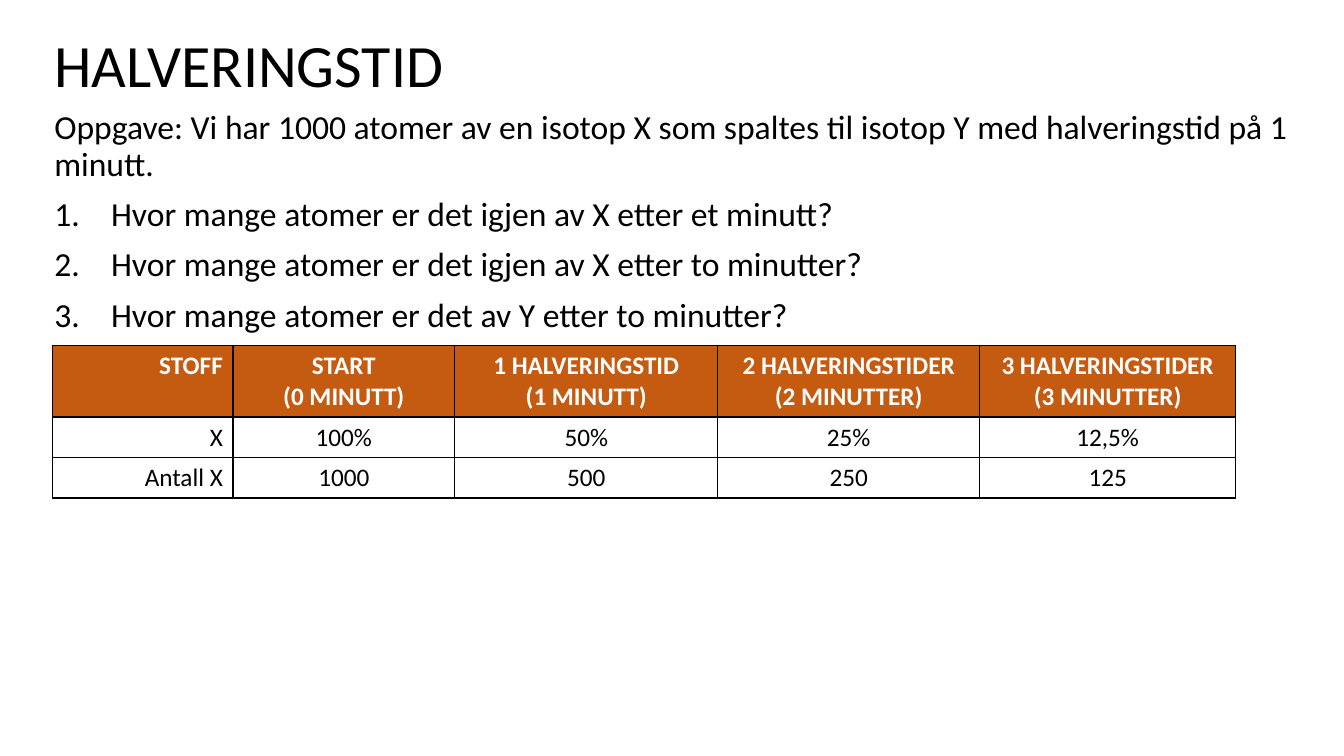
from lxml import etree
from pptx import Presentation
from pptx.dml.color import RGBColor
from pptx.enum.text import MSO_ANCHOR, PP_ALIGN
from pptx.oxml.ns import qn
from pptx.util import Cm, Pt

MIDDLE = MSO_ANCHOR.MIDDLE
CENTER = PP_ALIGN.CENTER
RIGHT = PP_ALIGN.RIGHT
FONT = "Calibri"
BLACK, WHITE, RUST = "000000", "FFFFFF", "C55A11"

TASK = "Oppgave: Vi har 1000 atomer av en isotop X som spaltes til isotop Y med halveringstid på 1 minutt."
ASKS = [
    "Hvor mange atomer er det igjen av X etter et minutt?",
    "Hvor mange atomer er det igjen av X etter to minutter?",
    "Hvor mange atomer er det av Y etter to minutter?",
]
ROWS = [
    ["STOFF", "START\n(0 MINUTT)", "1 HALVERINGSTID\n(1 MINUTT)",
     "2 HALVERINGSTIDER\n(2 MINUTTER)", "3 HALVERINGSTIDER\n(3 MINUTTER)"],
    ["X", "100%", "50%", "25%", "12,5%"],
    ["Antall X", "1000", "500", "250", "125"],
]
WIDTHS = [4.55, 5.59, 6.63, 6.6, 6.45]
HEIGHTS = [1.8, 1.02, 1.02]


def color(code):
    return RGBColor.from_string(code)


def style(para, size, code=BLACK, bold=False):
    for run in para.runs:
        font = run.font
        font.name, font.size, font.bold = FONT, Pt(size), bold
        font.color.rgb = color(code)


def add_text(slide, left, top, width, height, lines, size):
    box = slide.shapes.add_textbox(Cm(left), Cm(top), Cm(width), Cm(height))
    frame = box.text_frame
    frame.word_wrap = True
    frame.text = "\n".join(lines)
    for para in frame.paragraphs:
        style(para, size)
    return frame


def number(para):
    props = para._p.get_or_add_pPr()
    props.set("marL", str(Cm(1.43)))
    props.set("indent", str(-Cm(1.43)))
    etree.SubElement(props, qn("a:buFont"), typeface="+mj-lt")
    etree.SubElement(props, qn("a:buAutoNum"), type="arabicPeriod")


def add_task(slide):
    frame = add_text(slide, 1.12, 2.67, 32.49, 15.9, [TASK] + ASKS, 24)
    for para in frame.paragraphs:
        para.line_spacing = 0.9
        para.space_before = Pt(10)
    for para in frame.paragraphs[1:]:
        number(para)


def border(cell):
    props = cell._tc.get_or_add_tcPr()
    for place, side in enumerate(("a:lnL", "a:lnR", "a:lnT", "a:lnB")):
        line = etree.Element(qn(side), w=str(Pt(1)))
        fill = etree.SubElement(line, qn("a:solidFill"))
        etree.SubElement(fill, qn("a:srgbClr"), val=BLACK)
        props.insert(place, line)


def fill_cell(cell, text, head, first):
    para = cell.text_frame.paragraphs[0]
    para.text = text
    para.alignment = RIGHT if first else CENTER
    style(para, 18, WHITE if head else BLACK, head)
    cell.fill.solid()
    cell.fill.fore_color.rgb = color(RUST if head else WHITE)
    border(cell)


def add_grid(slide):
    shape = slide.shapes.add_table(
        len(ROWS), len(WIDTHS), Cm(1.32), Cm(8.71),
        Cm(sum(WIDTHS)), Cm(sum(HEIGHTS)))
    table = shape.table
    for col, width in zip(table.columns, WIDTHS):
        col.width = Cm(width)
    for row, height in zip(table.rows, HEIGHTS):
        row.height = Cm(height)
    for r, texts in enumerate(ROWS):
        for c, text in enumerate(texts):
            fill_cell(table.cell(r, c), text, r == 0, c == 0)


def main():
    deck = Presentation()
    deck.slide_width, deck.slide_height = Cm(33.87), Cm(19.05)
    slide = deck.slides.add_slide(deck.slide_layouts[6])
    add_task(slide)
    add_grid(slide)
    title = add_text(slide, 1.12, 0, 22.86, 3.18, ["HALVERINGSTID"], 42.9)
    title.vertical_anchor = MIDDLE
    deck.save("out.pptx")


if __name__ == "__main__":
    main()
